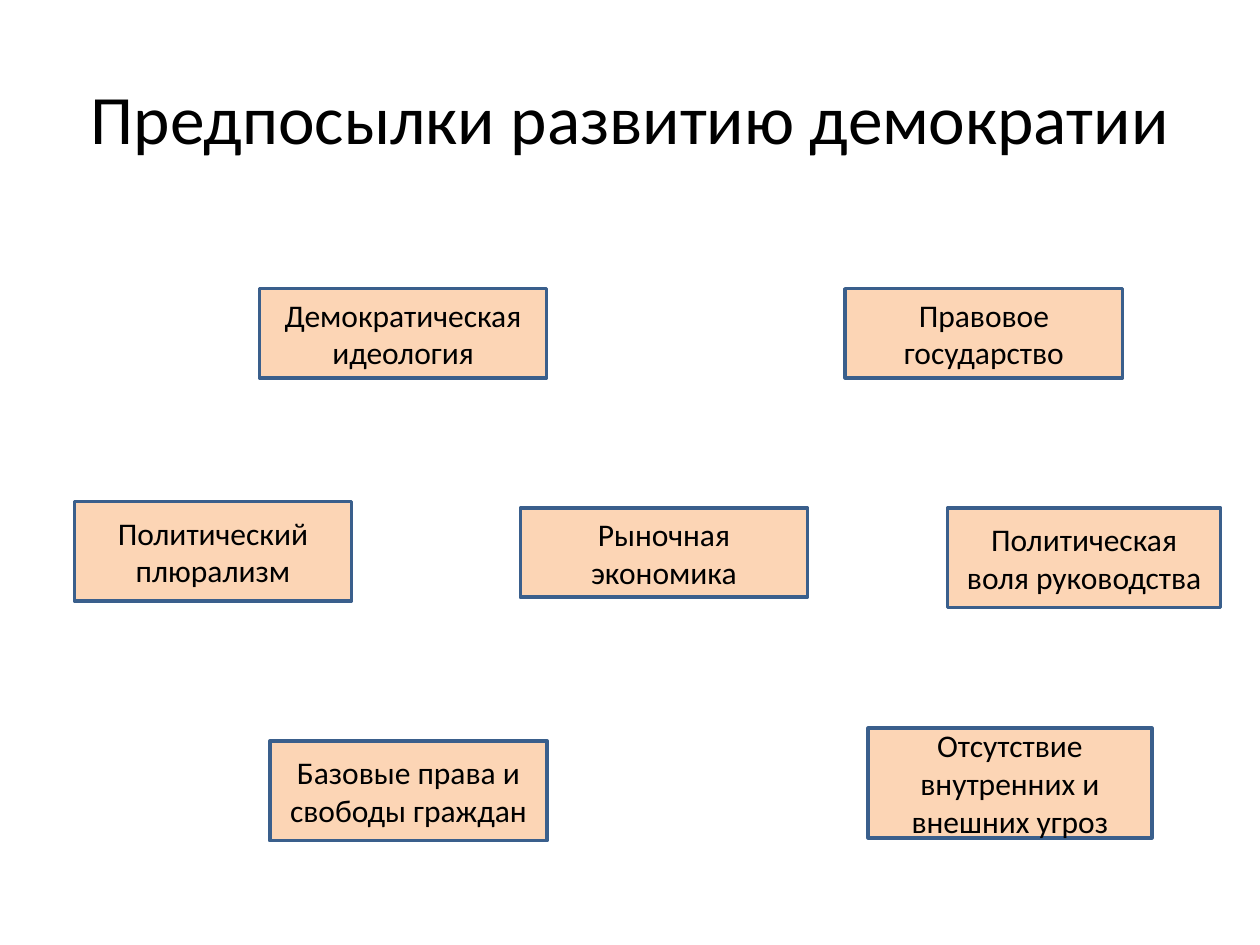
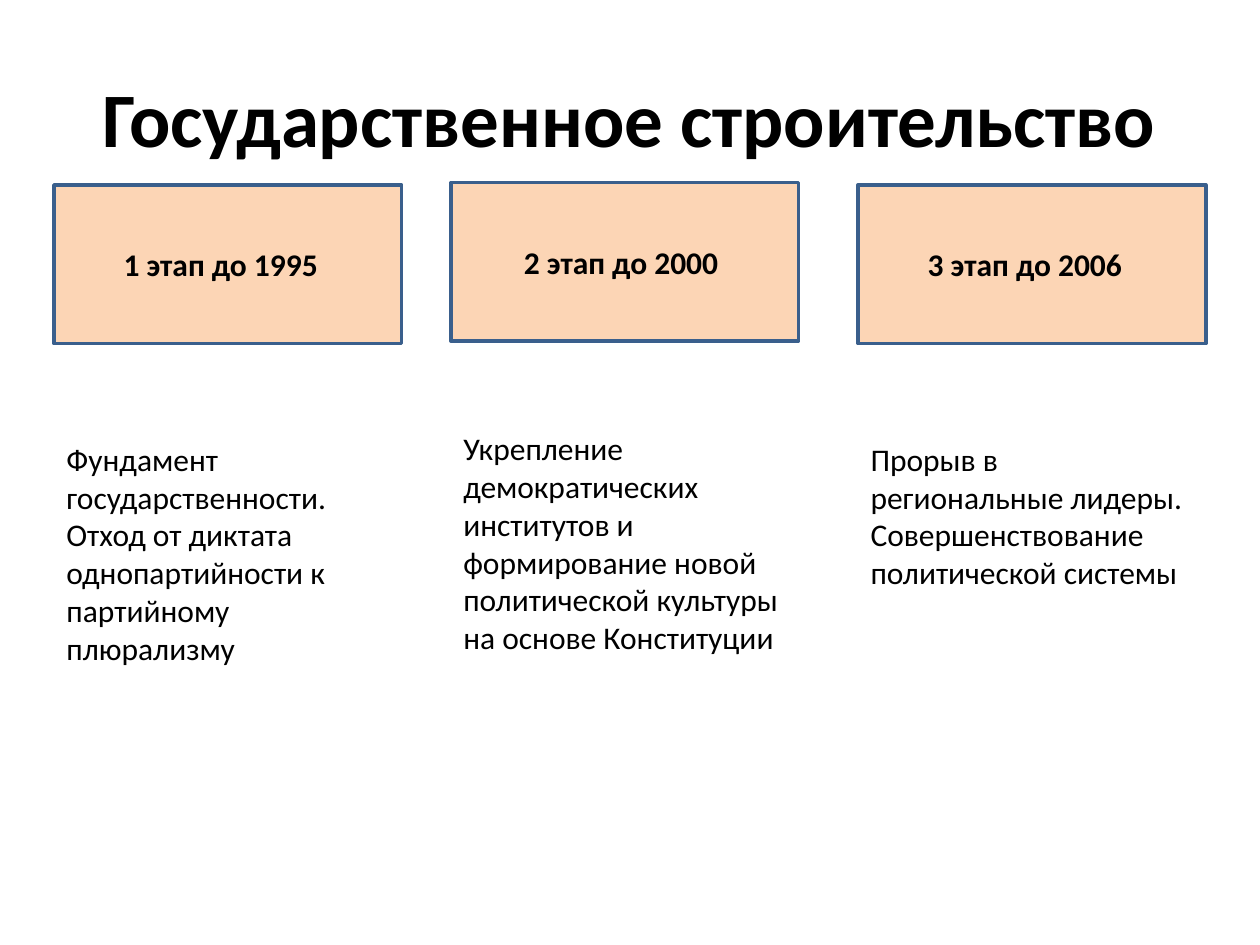
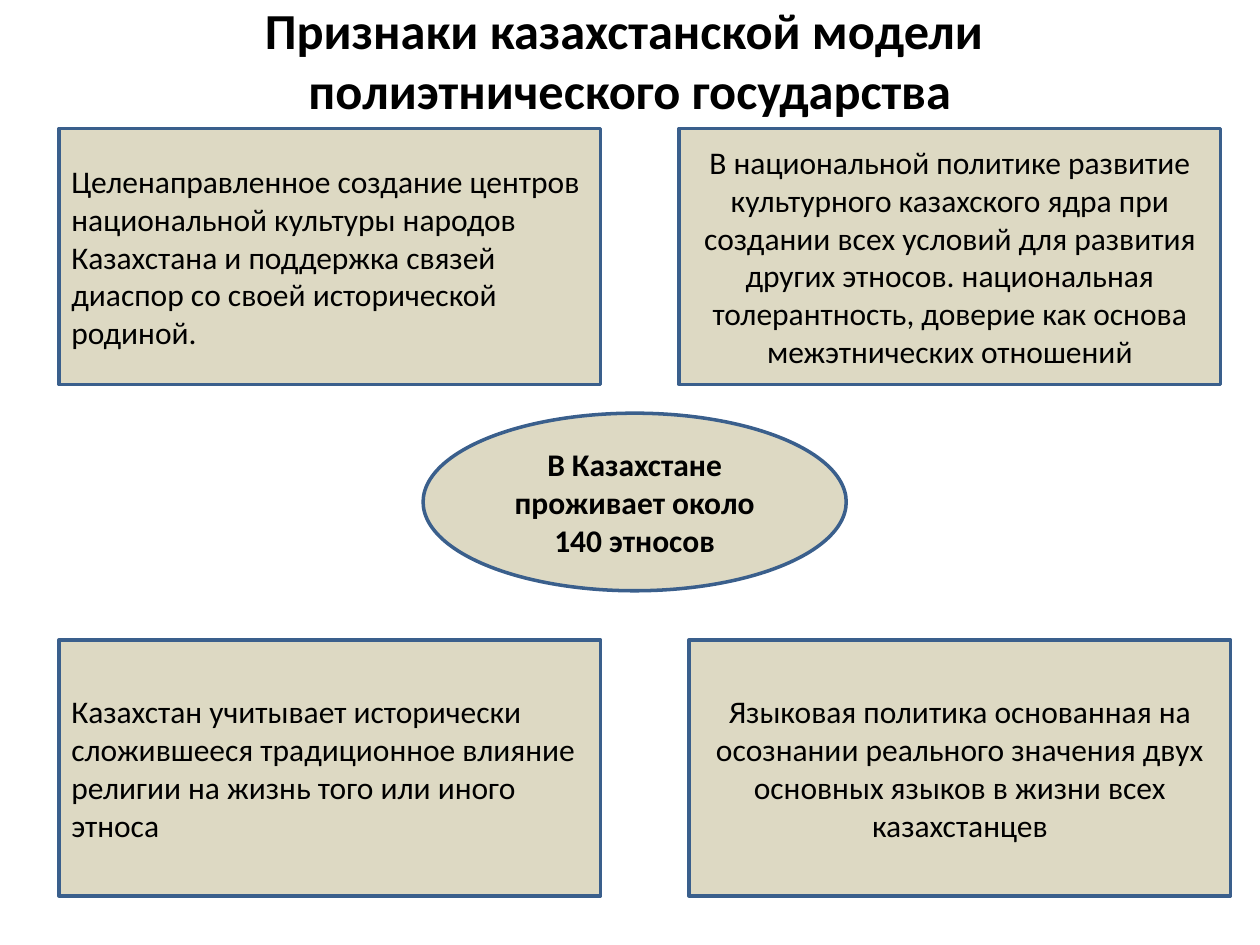
from pptx import Presentation
from pptx.dml.color import RGBColor
from pptx.enum.shapes import MSO_SHAPE
from pptx.enum.text import MSO_ANCHOR, MSO_AUTO_SIZE, PP_ALIGN
from pptx.util import Cm, Pt

tint = RGBColor.from_string
BLACK, BLUE, PEACH, SAND = "000000", "3A5F8C", "FCD5B5", "DDD9C3"
FONT = {"name": "Calibri", "size": Pt(18), "bold": False}
FRAME = {
    "word_wrap": True,
    "auto_size": MSO_AUTO_SIZE.NONE,
    "vertical_anchor": MSO_ANCHOR.MIDDLE,
}
LEFT, MID = PP_ALIGN.LEFT, PP_ALIGN.CENTER


def write(shape, text, align=MID, frame={}, **font):
    body = shape.text_frame
    body.text = text
    for key, value in (FRAME | frame).items():
        setattr(body, key, value)
    line = body.paragraphs[0]
    line.alignment = align
    for run in line.runs:
        for key, value in (FONT | font).items():
            setattr(run.font, key, value)
        run.font.color.rgb = tint(BLACK)


def box(slide, place, fill, text, kind=MSO_SHAPE.RECTANGLE, **look):
    shape = slide.shapes.add_shape(kind, *map(Cm, place))
    shape.shadow.inherit = False
    shape.fill.solid()
    shape.fill.fore_color.rgb = tint(fill)
    shape.line.color.rgb = tint(BLUE)
    shape.line.width = Pt(2)
    write(shape, text, **look)


deck = Presentation()
deck.slide_width, deck.slide_height = Cm(25.4), Cm(19.05)

heads = [
    ("Предпосылки развитию демократии", 39.6, False, (1.27, 0.76, 22.86, 3.18)),
    ("Государственное строительство", 44, True, (1.27, 0.76, 22.86, 3.18)),
    ("Признаки казахстанской модели \vполиэтнического государства", 28.8, True, (0, 0, 25.4, 2.39)),
]
slides = []
for text, size, bold, place in heads:
    slide = deck.slides.add_slide(deck.slide_layouts[5])
    title = slide.shapes.title
    for key, value in zip(("left", "top", "width", "height"), place):
        setattr(title, key, Cm(value))
    write(title, text, size=Pt(size), bold=bold)
    slides.append(slide)
roots, stages, traits = slides

causes = [
    ("Демократическая идеология", (5.23, 5.82, 5.79, 1.8)),
    ("Рыночная экономика", (10.49, 10.24, 5.79, 1.8)),
    ("Правовое государство", (17.04, 5.82, 5.59, 1.8)),
    ("Политический плюрализм", (1.5, 10.11, 5.59, 2.01)),
    ("Базовые права и свободы граждан", (5.44, 14.94, 5.59, 2.01)),
    ("Политическая воля руководства", (19.1, 10.24, 5.51, 2.01)),
    ("Отсутствие внутренних и внешних угроз", (17.5, 14.68, 5.72, 2.21)),
]
for text, place in causes:
    box(roots, place, PEACH, text)

steps = [
    ("1 этап до 1995", 1.09, 3.73, 8.74, 6.81, 4.88, 0.54,
     "Фундамент государственности. Отход от диктата однопартийности к партийному плюрализму"),
    ("2 этап до 2000", 9.09, 3.68, 8.53, 7.01, 4.88, 0.4,
     "Укрепление демократических институтов и формирование новой политической культуры на основе Конституции"),
    ("3 этап до 2006", 17.3, 3.73, 8.74, 7.01, 3.33, 0.54,
     "Прорыв в региональные лидеры. Совершенствование политической системы"),
]
for name, left, top, low, width, height, inset, text in steps:
    box(stages, (left, top, 7.01, 3.2), PEACH, name, bold=True, frame={"margin_right": Cm(inset)})
    note = stages.shapes.add_textbox(*map(Cm, (left, low, width, height)))
    write(note, text, LEFT, {"vertical_anchor": MSO_ANCHOR.TOP, "auto_size": MSO_AUTO_SIZE.SHAPE_TO_FIT_TEXT})

box(traits, (8.53, 8.33, 8.53, 3.58), SAND, "В Казахстане проживает около 140 этносов",
    MSO_SHAPE.OVAL, bold=True)
signs = [
    (13.69, 2.59, MID, "В национальной политике развитие культурного казахского ядра при создании всех условий для развития других этносов. национальная толерантность, доверие как основа межэтнических отношений"),
    (13.89, 12.9, MID, "Языковая политика основанная на осознании реального значения двух основных языков в жизни всех казахстанцев"),
    (1.19, 12.9, LEFT, "Казахстан учитывает исторически сложившееся традиционное влияние религии на жизнь того или иного этноса"),
    (1.19, 2.59, LEFT, "Целенаправленное создание центров национальной культуры народов Казахстана и поддержка связей диаспор со своей исторической родиной."),
]
for left, top, align, text in signs:
    box(traits, (left, top, 10.92, 5.16), SAND, text, align=align)

deck.save("out.pptx")
